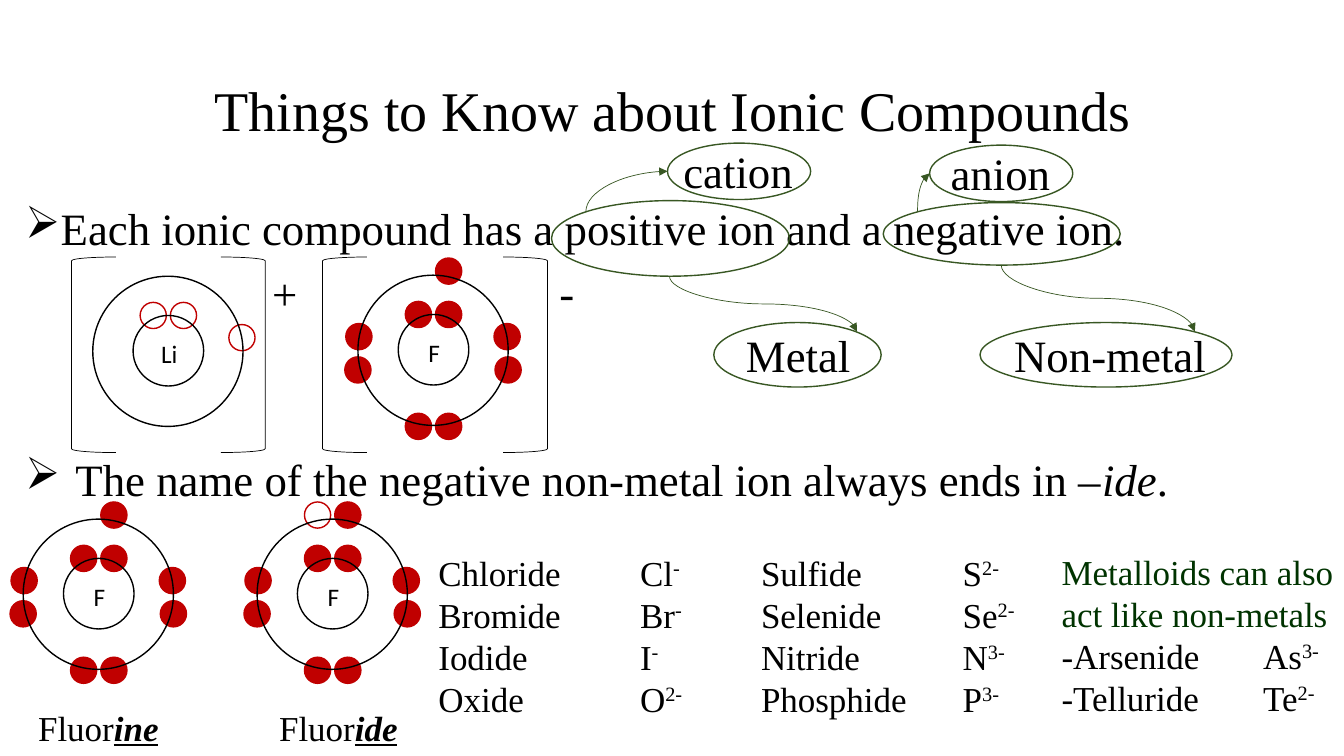
from lxml import etree
from pptx import Presentation
from pptx.dml.color import RGBColor
from pptx.enum.shapes import MSO_CONNECTOR as Link, MSO_SHAPE as Shape
from pptx.enum.text import MSO_ANCHOR as Anchor, MSO_AUTO_SIZE as Fit, PP_ALIGN as Align
from pptx.oxml.ns import qn
from pptx.util import Pt

PX = 9144  # 100 px to the inch
SERIF = "Times New Roman"
COLORS = {name: RGBColor.from_string(code) for name, code in {
    "black": "000000", "white": "FFFFFF", "red": "C00000",
    "green": "385723", "dark": "003300"}.items()}

deck = Presentation()
deck.slide_width, deck.slide_height = 1333 * PX, 750 * PX
slide = deck.slides.add_slide(deck.slide_layouts[6])
shapes = slide.shapes


def write(x, y, w, h, lines, size=32, face=SERIF, wrap=False):
    """Add a text box; a bar in a line starts a new run."""
    box = shapes.add_textbox(x * PX, y * PX, w * PX, h * PX)
    frame = box.text_frame
    frame.word_wrap = wrap
    frame.auto_size = Fit.NONE if wrap else Fit.SHAPE_TO_FIT_TEXT
    frame.text = "\n".join(line.split("|")[0] for line in lines)
    for par, line in zip(frame.paragraphs, lines):
        for part in line.split("|")[1:]:
            par.add_run().text = part
        for run in par.runs:
            run.font.size, run.font.name = Pt(size), face
            run.font.color.rgb = COLORS["black"]
    return frame


def draw(x, y, w, h, line="black", fill=None, kind=Shape.OVAL, width=1):
    form = shapes.add_shape(kind, x * PX, y * PX, w * PX, h * PX)
    form.shadow.inherit = False
    form.line.color.rgb, form.line.width = COLORS[line], Pt(width)
    if fill:
        form.fill.solid()
        form.fill.fore_color.rgb = COLORS[fill]
    else:
        form.fill.background()


# Title and the two bulleted statements
title = write(15, 40, 1304, 145, ["Things to Know about Ionic Compounds"], 40, wrap=True)
title.vertical_anchor = Anchor.MIDDLE
title.paragraphs[0].alignment = Align.CENTER
title.paragraphs[0].line_spacing = 0.9

ions = write(15, 200, 1304, 77,
             ["Each ionic compound has a positive ion and a negative ion."], wrap=True)
ions.paragraphs[0].line_spacing = 0.9
ending = write(15, 443, 1304, 64,
               ["The name of the negative non-metal ion always ends in –|ide|."], wrap=True)
ending.paragraphs[0].runs[1].font.italic = True
for frame, indent in ((ions, 25), (ending, 50)):
    props = frame.paragraphs[0]._p.get_or_add_pPr()
    props.set("marL", str(indent * PX))
    props.set("indent", str(-indent * PX))
    etree.SubElement(props, qn("a:buChar")).set("char", "➢")

# Words and their rings
for word, x, y, w in (("Metal", 730, 320, 125), ("Non-metal", 996, 320, 212),
                      ("cation", 668, 138, 130), ("anion", 933, 140, 120),
                      ("+", 260, 259, 45), ("-", 545, 258, 35)):
    write(x, y, w, 64, [word])
for ring in ((547, 199, 236, 75), (876, 201, 235, 62), (708, 320, 166, 64),
             (972, 320, 250, 64), (662, 142, 142, 56), (922, 144, 142, 56)):
    draw(*ring, line="green")

# Curved arrows leave vertically, so each is laid out on its side and turned
for x1, y1, x2, y2 in ((664, 274, 850, 329), (993, 263, 1185, 329),
                       (581, 210, 662, 170), (910, 210, 922, 172)):
    down = y2 > y1
    mid, cen = (x1 + x2) * PX // 2, (y1 + y2) * PX // 2
    wide, tall = abs(y2 - y1) * PX // 2, (x2 - x1) * PX // 2
    rise = tall if down else -tall
    arrow = shapes.add_connector(Link.CURVE, mid + wide, cen - rise, mid - wide, cen + rise)
    arrow.line.color.rgb, arrow.line.width = COLORS["green"], Pt(0.5)
    props = arrow._element.spPr
    props.find(qn("a:xfrm")).set("rot", str((270 if down else 90) * 60000))
    if not down:
        props.find(qn("a:prstGeom")).set("prst", "curvedConnector2")
    etree.SubElement(arrow.line._get_or_add_ln(), qn("a:tailEnd")).set("type", "triangle")
    etree.SubElement(props, qn("a:effectLst"))

# Atoms: electrons sit at offsets from the corner of the outer shell
INNER = [(47, 26), (77, 26)]
OUTER = [(135, 48), (136, 81), (77, 137), (47, 137), (-13, 81), (-12, 48), (77, -17)]
GAINED = (47, -17)
for name, wide, x, y, full, empty in (
        ("F", 32, 23, 515, INNER + OUTER, []),
        ("F", 32, 255, 515, INNER + OUTER, [GAINED]),
        ("Li", 37, 92, 274, [], INNER + OUTER[:1]),
        ("F", 32, 355, 273, INNER + OUTER, [])):
    write(x + 76 - wide // 2, y + 57, wide, 40, [name], 18, "Calibri")
    for spots, fill in ((full, "red"), (empty, "white")):
        for dx, dy in spots:
            draw(x + dx, y + dy, 26, 26, "red", fill)
    draw(x + 40, y + 39, 70, 70)
    draw(x, y, 149, 149)

for left, right in ((71, 219), (320, 499)):
    draw(left, 255, 44, 194, kind=Shape.LEFT_BRACKET, width=0.5)
    draw(right, 255, 44, 194, kind=Shape.RIGHT_BRACKET, width=0.5)

for x, name in ((28, "Fluor|ine"), (267, "Fluor|ide")):
    font = write(x, 696, 141, 52, [name], 25).paragraphs[0].runs[1].font
    font.bold = font.italic = font.underline = True

# Ion names with symbols at a tab stop and raised charges
for x, y, w, lines in (
        (425, 542, 267, ["Chloride\tCl|-", "Bromide\tBr|-", "Iodide\tI|-", "Oxide\tO|2-"]),
        (745, 542, 276, ["Sulfide\tS|2-", "Selenide\tSe|2-", "Nitride\tN|3-",
                         "Phosphide\tP|3-"]),
        (1043, 541, 302, ["Metalloids can also", "act like non-metals",
                          "-Arsenide\tAs|3-", "-Telluride\tTe|2-"])):
    for par in write(x, y, w, 178, lines, 25).paragraphs:
        if len(par.runs) == 1:
            par.runs[0].font.color.rgb = COLORS["dark"]
            continue
        par.runs[1].font._element.set("baseline", "30000")
        tabs = etree.SubElement(par._p.get_or_add_pPr(), qn("a:tabLst"))
        etree.SubElement(tabs, qn("a:tab"), pos=str(200 * PX), algn="l")

deck.save("out.pptx")
